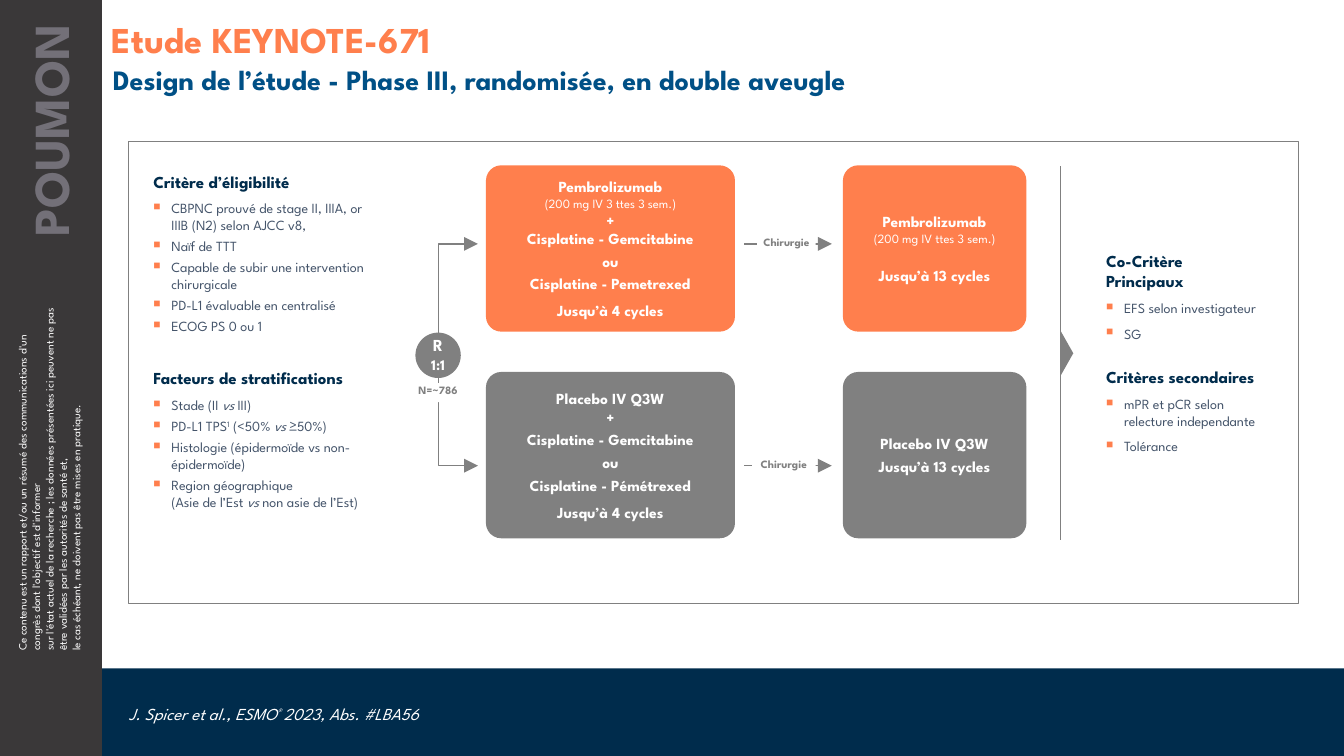
from copy import deepcopy

from lxml.etree import SubElement
from pptx import Presentation
from pptx.dml.color import RGBColor
from pptx.enum.shapes import MSO_CONNECTOR, MSO_SHAPE as SHAPE
from pptx.enum.text import MSO_ANCHOR as ANCHOR, PP_ALIGN as ALIGN
from pptx.oxml.ns import qn
from pptx.util import Inches, Pt

FONT = "League Spartan"
COLORS = {
    "navy": "002C4C", "blue": "005086", "orange": "FF7F4D", "grey": "808080",
    "charcoal": "3A3839", "mauve": "737078", "slate": "44546A", "white": "FFFFFF",
}
# Style name: (size, colour, further font formats)
STYLES = {
    "title": (26, "orange", {"bold": True}),
    "subtitle": (20, "blue", {"bold": True}),
    "organ": (36, "mauve", {"bold": True}),
    "disclaimer": (8, "white", {}),
    "heading": (12, "navy", {"bold": True}),
    "item": (10, "slate", {"bold": False}),
    "item_italic": (10, "slate", {"italic": True}),
    "item_super": (10, "slate", {}),
    "arm": (11, "white", {"bold": True}),
    "dose": (9, "white", {}),
    "random": (12, "white", {"bold": True}),
    "ratio": (10.5, "white", {"bold": True}),
    "label": (8, "grey", {"bold": True}),
    "citation": (12, "white", {"italic": True}),
    "citation_super": (12, "white", {"italic": True}),
}


def rgb(name):
    return RGBColor.from_string(COLORS[name])


def add_bullet(paragraph):
    props = paragraph._p.get_or_add_pPr()
    props.set("marL", str(Inches(0.18)))
    props.set("indent", str(-Inches(0.18)))
    color = SubElement(props, qn("a:buClr"))
    SubElement(color, qn("a:srgbClr"), val=COLORS["orange"])
    SubElement(props, qn("a:buSzPct"), val="70000")
    SubElement(props, qn("a:buChar"), char="■")


def add_run(paragraph, text, style):
    """Write text in a style; each newline becomes a line break of that style."""
    size, color, formats = STYLES[style]
    for index, piece in enumerate(text.split("\n")):
        if index:
            paragraph.add_line_break()
            line_break = paragraph._p[-1]
        run = paragraph.add_run()
        run.text = piece
        for key, value in {"name": FONT, "size": Pt(size), **formats}.items():
            setattr(run.font, key, value)
        run.font.color.rgb = rgb(color)
        if style.endswith("super"):
            run._r.get_or_add_rPr().set("baseline", "30000")
        if index:
            line_break.append(deepcopy(run._r.rPr))
        if not piece:
            paragraph._p.remove(run._r)


def write(shape, paragraphs, align=ALIGN.LEFT, anchor=ANCHOR.TOP,
          insets=(0.1, 0.05, 0.1, 0.05), line_spacing=None):
    """Each paragraph is (space before, runs), with runs as (text, style)."""
    frame = shape.text_frame
    sides = ("margin_left", "margin_top", "margin_right", "margin_bottom")
    formats = {"word_wrap": True, "vertical_anchor": anchor,
               **dict(zip(sides, map(Inches, insets)))}
    for key, value in formats.items():
        setattr(frame, key, value)
    for index, (before, runs) in enumerate(paragraphs):
        paragraph = frame.add_paragraph() if index else frame.paragraphs[0]
        if runs[0][1] == "item":
            add_bullet(paragraph)
        paragraph.alignment = align
        if before:
            paragraph.space_before = Pt(before)
        if line_spacing:
            paragraph.line_spacing = line_spacing
        for text, style in runs:
            add_run(paragraph, text, style)


def add_text(slide, box, paragraphs, rotation=0, **layout):
    text_box = slide.shapes.add_textbox(*map(Inches, box))
    text_box.rotation = rotation
    write(text_box, paragraphs, **layout)


def add_block(slide, kind, box, fill=None, line=None, width=1, adj=None):
    block = slide.shapes.add_shape(kind, *map(Inches, box))
    block.shadow.inherit = False
    if adj is not None:
        block.adjustments[0] = adj
    if fill:
        block.fill.solid()
        block.fill.fore_color.rgb = rgb(fill)
    else:
        block.fill.background()
    if line:
        block.line.color.rgb = rgb(line)
        block.line.width = Pt(width)
    else:
        block.line.fill.background()
    return block


def add_arrowheads(shape, *ends):
    for end in ends:
        SubElement(shape.line._get_or_add_ln(), qn(f"a:{end}"),
                   type="triangle", w="lg", len="lg")


def add_line(slide, *points):
    line = slide.shapes.add_connector(MSO_CONNECTOR.STRAIGHT, *map(Inches, points))
    line.line.color.rgb = rgb("grey")
    line.line.width = Pt(1)
    SubElement(line._element.spPr, qn("a:effectLst"))
    return line


def add_arm(slide, box, color, paragraphs):
    arm = add_block(slide, SHAPE.ROUNDED_RECTANGLE, box, fill=color, adj=0.092)
    write(arm, paragraphs, ALIGN.CENTER, ANCHOR.MIDDLE, (0.08,) * 4)


def add_label(slide, box, text):
    label = add_block(slide, SHAPE.RECTANGLE, box, fill="white")
    write(label, [(0, [(text, "label")])], ALIGN.CENTER, ANCHOR.MIDDLE, (0, 0, 0, 0.05))


def arm_lines(*lines):
    return [(before, [(text, "arm")]) for before, text in lines]


def items(first, rest, *texts):
    """Bulleted paragraphs; a text is a string or a list of runs."""
    return [(rest if index else first, [(text, "item")] if isinstance(text, str) else text)
            for index, text in enumerate(texts)]


def heading(text, before=0):
    return [(before, [(text, "heading")])]


def add_page_frame(slide):
    add_block(slide, SHAPE.RECTANGLE, (1.01, 6.63, 12.32, 0.87), fill="navy")
    add_block(slide, SHAPE.RECTANGLE, (0, 0, 1.01, 7.5), fill="charcoal")
    add_text(slide, (-1.31, 4.37, 3.6, 0.77), [(0, [(
        "Ce contenu est un rapport et/ou un résumé des communications d'un congrès dont "
        "l'objectif est d'informer\nsur l'état actuel de la recherche ; les données présentées "
        "ici peuvent ne pas être validées par les autorités de santé et,\n"
        "le cas échéant, ne doivent pas être mises en pratique.", "disclaimer")])], rotation=270)
    add_text(slide, (-1.04, 1.18, 3.07, 0.71), [(0, [("POUMON", "organ")])], rotation=270,
             align=ALIGN.RIGHT, insets=(0.1, 0.05, 0.24, 0.05))
    add_text(slide, (1.18, 6.66, 7.52, 0.84), [(0, [
        ("J. Spicer et al., ESMO", "citation"), ("® ", "citation_super"),
        ("2023, Abs. #LBA56", "citation")])], anchor=ANCHOR.MIDDLE)


def add_criteria(slide):
    add_text(slide, (1.44, 1.62, 2.38, 3.72), [
        *heading("Critère d’éligibilité"),
        *items(6, 3, "CBPNC prouvé de stage II, IIIA, or IIIB (N2) selon AJCC v8,",
               "Naïf de TTT", "Capable de subir une intervention chirurgicale",
               "PD-L1 évaluable en centralisé", "ECOG PS 0 ou 1"),
        *heading("Facteurs de stratifications", 24),
        *items(6, 3,
               [("Stade (II ", "item"), ("vs", "item_italic"), (" III)", "item")],
               [("PD-L1 TPS", "item"), ("1", "item_super"), (" (<50% ", "item"),
                ("vs ", "item_italic"), ("≥50%)", "item")],
               "Histologie (épidermoïde vs non-épidermoïde)",
               [("Region géographique\n(Asie de l’Est", "item"), (" vs", "item_italic"),
                (" non asie de l’Est)", "item")]),
    ], insets=(0.08,) * 4)


def add_endpoints(slide):
    add_line(slide, 10.52, 1.65, 10.52, 5.36)
    add_block(slide, SHAPE.ISOSCELES_TRIANGLE, (10.35, 3.44, 0.46, 0.13), fill="grey").rotation = 90
    add_text(slide, (10.89, 2.06, 1.74, 2.88), [
        *heading("Co-Critère\nPrincipaux"),
        *items(6, 6, "EFS selon investigateur", "SG"),
        *heading("Critères secondaires", 18),
        *items(6, 6, "mPR et pCR selon relecture independante", "Tolérance"),
    ], anchor=ANCHOR.MIDDLE, insets=(0.08,) * 4)


def add_randomisation(slide):
    branches = add_block(slide, SHAPE.LEFT_BRACKET, (4.35, 2.42, 0.39, 2.2), line="grey", adj=0)
    add_arrowheads(branches, "headEnd", "tailEnd")
    circle = add_block(slide, SHAPE.OVAL, (4.12, 3.3, 0.45, 0.45), fill="grey")
    write(circle, [(0, [("R\n", "random"), ("1:1", "ratio")])], ALIGN.CENTER, ANCHOR.MIDDLE,
          (0.01,) * 4, Pt(13))
    add_label(slide, (3.94, 3.8, 0.81, 0.19), "N=~786")


def add_arms(slide):
    arms = [
        (1.64, "orange", (7.51, 0.58),
         [(0, [("Pembrolizumab\n", "arm"), ("(200 mg IV 3 ttes 3 sem.)\n", "dose"),
               ("+\nCisplatine - Gemcitabine", "arm")]),
          *arm_lines((3, "ou"), (3, "Cisplatine - Pemetrexed"), (6, "Jusqu’à 4 cycles"))],
         [(0, [("Pembrolizumab\n", "arm"), ("(200 mg IV ttes 3 sem.)", "dose")]),
          *arm_lines((15, "Jusqu’à 13 cycles"))]),
        (3.69, "grey", (7.46, 0.63),
         arm_lines((0, "Placebo IV Q3W"), (0, "+"), (3, "Cisplatine - Gemcitabine"),
                   (3, "ou"), (3, "Cisplatine - Pémétrexed"), (6, "Jusqu’à 4 cycles")),
         arm_lines((0, "Placebo IV Q3W"), (3, "Jusqu’à 13 cycles"))),
    ]
    for (top, color, (label_left, label_width), before_surgery, after_surgery), arrow_y in zip(
            arms, (2.42, 4.62)):
        add_arm(slide, (4.82, top, 2.47, 1.65), color, before_surgery)
        add_arm(slide, (8.36, top, 1.82, 1.65), color, after_surgery)
        add_arrowheads(add_line(slide, 7.38, arrow_y, 8.25, arrow_y), "tailEnd")
        add_label(slide, (label_left, arrow_y - 0.09, label_width, 0.19), "Chirurgie")


def main():
    deck = Presentation()
    deck.slide_width, deck.slide_height = Inches(13.33), Inches(7.5)
    slide = deck.slides.add_slide(deck.slide_layouts[6])

    # Side bar, footer and headings
    add_page_frame(slide)
    add_text(slide, (1.02, 0.57, 12.31, 0.5),
             [(0, [("Design de l’étude - Phase III, randomisée, en double aveugle", "subtitle")])])
    add_text(slide, (1.01, 0.17, 12.18, 0.4), [(0, [("Etude KEYNOTE-671", "title")])],
             line_spacing=0.9)

    # Study design
    add_block(slide, SHAPE.RECTANGLE, (1.27, 1.4, 11.61, 4.59), line="grey", width=0.75)
    add_criteria(slide)
    add_randomisation(slide)
    add_arms(slide)
    add_endpoints(slide)

    deck.save("out.pptx")


if __name__ == "__main__":
    main()
